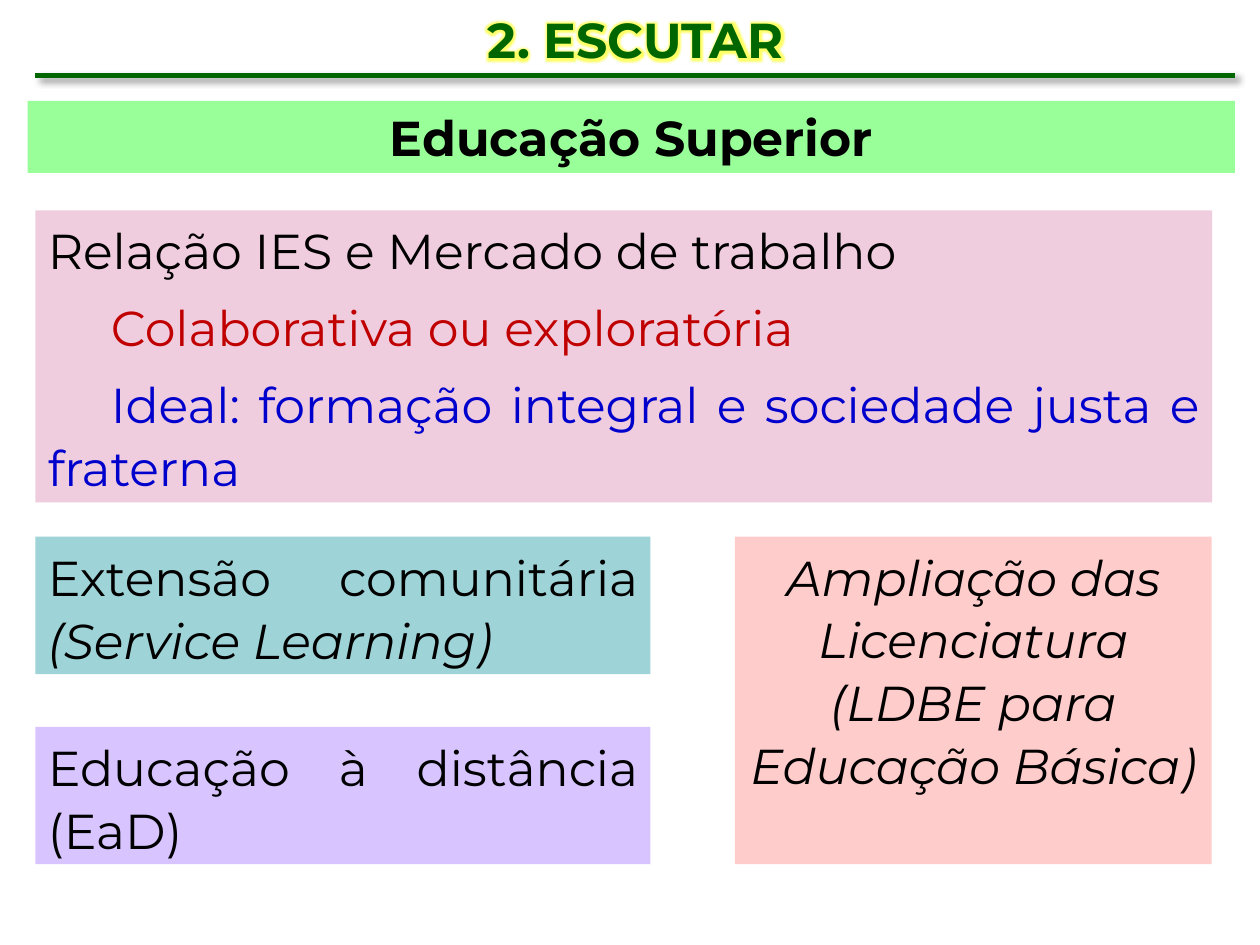
from lxml.etree import SubElement
from pptx import Presentation
from pptx.dml.color import RGBColor
from pptx.enum.shapes import MSO_CONNECTOR, MSO_SHAPE
from pptx.enum.text import MSO_ANCHOR, MSO_AUTO_SIZE, PP_ALIGN
from pptx.oxml import parse_xml
from pptx.oxml.ns import nsdecls, qn
from pptx.util import Pt

COLORS = {
    "black": "000000", "green": "006600", "glow": "FFFF66", "red": "C00000",
    "blue": "0000CC", "mint": "99FF99", "pink": "EFCDDE", "teal": "9ED3D7",
    "salmon": "FFCCCC", "lilac": "D8C5FF",
}
LEFT, HALF_WIDTH, HALF_HEIGHT = 20.2, 351.4, 78.5
LOWER_TOP, LOWER_HEIGHT = 306.7, 187.2
BODY = {"line_spacing": 1.07, "space_after": Pt(8)}
JUSTIFIED = {**BODY, "alignment": PP_ALIGN.JUSTIFY}
CENTERED = {**BODY, "alignment": PP_ALIGN.CENTER}
HEADING = {"alignment": PP_ALIGN.CENTER}


def apply(target, values):
    for name, value in values.items():
        setattr(target, name, value)


class SlideBuilder:
    font = {"name": "Montserrat", "size": Pt(28), "bold": False, "italic": False}

    def __init__(self, page):
        self.page = page

    def color(self, name):
        return RGBColor.from_string(COLORS[name])

    def add_text(self, frame, paragraphs, layout):
        for index, spans in enumerate(paragraphs):
            para = frame.add_paragraph() if index else frame.paragraphs[0]
            apply(para, layout)
            for text, color, style in spans:
                span = para.add_run()
                span.text = text
                apply(span.font, {**self.font, **style})
                span.font.color.rgb = self.color(color)

    def title(self, text, left, top, width, height):
        box = self.page.shapes.title
        apply(box, {"left": Pt(left), "top": Pt(top),
                    "width": Pt(width), "height": Pt(height)})
        apply(box.text_frame, {"vertical_anchor": MSO_ANCHOR.MIDDLE, "word_wrap": True,
                               "auto_size": MSO_AUTO_SIZE.NONE})
        self.add_text(box.text_frame, [[(text, "green", {"bold": True})]], HEADING)
        fill = box.text_frame.paragraphs[0].runs[0].font._element.find(qn("a:solidFill"))
        fill.addnext(parse_xml(
            f'<a:effectLst {nsdecls("a")}><a:glow rad="{Pt(5)}">'
            f'<a:srgbClr val="{COLORS["glow"]}"/></a:glow></a:effectLst>'))

    def rule(self, left, top, right):
        line = self.page.shapes.add_connector(
            MSO_CONNECTOR.STRAIGHT, Pt(left), Pt(top), Pt(right), Pt(top))
        line.line.color.rgb = self.color("green")
        line.line.width = Pt(3)
        effects = SubElement(line._element.spPr, qn("a:effectLst"))
        shadow = SubElement(effects, qn("a:outerShdw"), blurRad=str(Pt(4)),
                            dist=str(Pt(3)), dir="2700000", rotWithShape="0")
        shade = SubElement(shadow, qn("a:srgbClr"), val=COLORS["black"])
        SubElement(shade, qn("a:alpha"), val="40000")

    def panel(self, fill, left, top, width, height, paragraphs, layout):
        box = self.page.shapes.add_shape(
            MSO_SHAPE.RECTANGLE, Pt(left), Pt(top), Pt(width), Pt(height))
        box.shadow.inherit = False
        box.fill.solid()
        box.fill.fore_color.rgb = self.color(fill)
        box.line.fill.background()
        apply(box.text_frame, {"word_wrap": True, "vertical_anchor": MSO_ANCHOR.TOP,
                               "auto_size": MSO_AUTO_SIZE.SHAPE_TO_FIT_TEXT})
        self.add_text(box.text_frame, paragraphs, layout)


def main():
    deck = Presentation()
    apply(deck, {"slide_width": Pt(720), "slide_height": Pt(540)})
    builder = SlideBuilder(deck.slides.add_slide(deck.slide_layouts[5]))
    italic = {"italic": True}

    builder.title("2. ESCUTAR", LEFT, 3.6, 686, 37.4)
    builder.rule(LEFT, 43.2, 705.6)
    builder.panel("mint", 15.8, 57.6, 689.8, 41.2,
                  [[("Educação Superior", "black", {"bold": True})]], HEADING)
    builder.panel("pink", LEFT, 120.2, 672.4, 167, [
        [("Relação IES e Mercado de trabalho", "black", {})],
        [("\tColaborativa ou exploratória", "red", {})],
        [("\tIdeal: formação integral e sociedade justa e fraterna", "blue", {})],
    ], JUSTIFIED)
    builder.panel("teal", LEFT, LOWER_TOP, HALF_WIDTH, HALF_HEIGHT, [
        [("Extensão comunitária ", "black", {}), ("(Service Learning)", "black", italic)],
    ], JUSTIFIED)
    builder.panel("salmon", 420, LOWER_TOP, 272.4, LOWER_HEIGHT, [
        [("Ampliação das Licenciatura (LDBE para Educação Básica)", "black", italic)],
    ], CENTERED)
    builder.panel("lilac", LEFT, LOWER_TOP + LOWER_HEIGHT - HALF_HEIGHT,
                  HALF_WIDTH, HALF_HEIGHT,
                  [[("Educação à distância (EaD)", "black", {})]], JUSTIFIED)
    deck.save("out.pptx")


if __name__ == "__main__":
    main()
